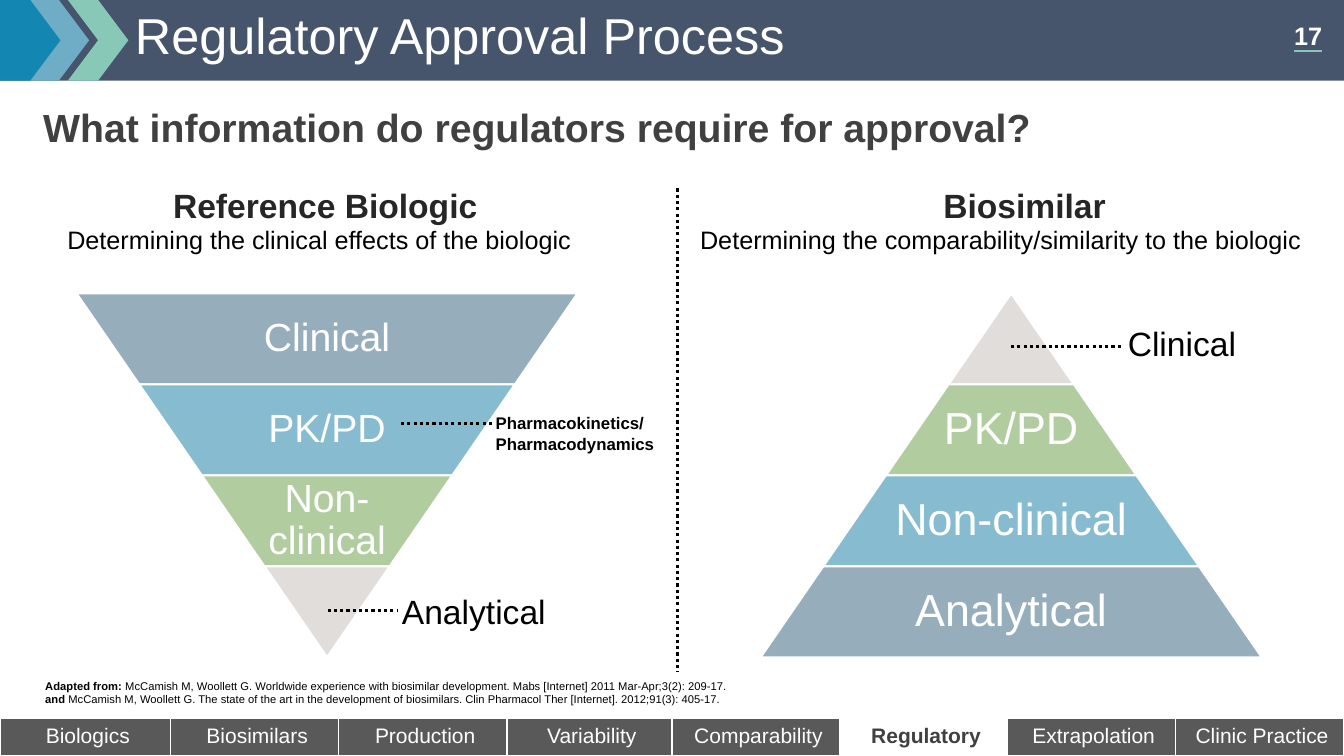
from lxml import etree
from pptx import Presentation
from pptx.dml.color import RGBColor
from pptx.enum import dml, shapes, text
from pptx.oxml import ns
from pptx.util import Pt

FONT = "Arial"
WHITE, BLACK, DARK, TAB_GREY = "FFFFFF", "000000", "404040", "595959"
SLATE, BLUE, GREEN, STONE = "7C9AAC", "69ABC3", "9EC189", "DAD5D1"
TIER_HEIGHT, TIER_STEP, PYRAMID_TOP = 65, 89.5, 209.5
TAB_TOP, TAB_HEIGHT = 512.8, 27.2
TABS = [("Biologics", 0), ("Biosimilars", 122), ("Production", 242),
        ("Variability", 362), ("Comparability", 480), ("Regulatory", 600),
        ("Extrapolation", 719.5), ("Clinic Practice", 839.5)]
SHAPE, ALIGN, ANCHOR = shapes.MSO_SHAPE, text.PP_ALIGN, text.MSO_ANCHOR


def rgb(value):
    return RGBColor.from_string(value)


def add_block(slide, kind, left, top, width, height, fill, outline=None, alpha=None):
    sp = slide.shapes.add_shape(kind, Pt(left), Pt(top), Pt(width), Pt(height))
    sp.shadow.inherit = False
    sp.fill.solid()
    sp.fill.fore_color.rgb = rgb(fill)
    if alpha:
        color = sp.fill._xPr.find(".//" + ns.qn("a:srgbClr"))
        etree.SubElement(color, ns.qn("a:alpha"), val=str(alpha * 1000))
    if outline:
        sp.line.color.rgb = rgb(WHITE)
        sp.line.width = Pt(outline)
    else:
        sp.line.fill.background()
    return sp


def add_line(slide, x1, y1, x2, y2, color=BLACK, width=2.25, dotted=True):
    line = slide.shapes.add_connector(
        shapes.MSO_CONNECTOR.STRAIGHT, Pt(x1), Pt(y1), Pt(x2), Pt(y2))
    line.line.color.rgb = rgb(color)
    line.line.width = Pt(width)
    if dotted:
        line.line.dash_style = dml.MSO_LINE.ROUND_DOT
    etree.SubElement(line._element.spPr, ns.qn("a:effectLst"))


def write(sp, lines, size, color=BLACK, bold=False, align=ALIGN.LEFT,
          anchor=ANCHOR.TOP, spacing=None, insets=None, wrap=True):
    tf = sp.text_frame
    tf.word_wrap = wrap
    tf.vertical_anchor = anchor
    if insets:
        tf.margin_left, tf.margin_top, tf.margin_right, tf.margin_bottom = map(Pt, insets)
    for i, content in enumerate(lines):
        p = tf.add_paragraph() if i else tf.paragraphs[0]
        p.alignment = align
        p.line_spacing = spacing
        p.font.name = FONT
        p.font.size = Pt(size)
        p.font.color.rgb = rgb(color)
        if isinstance(content, str):
            p.font.bold = bold
            p.add_run().text = content
            continue
        for words, run_bold in content:
            r = p.add_run()
            r.text = words
            r.font.bold = run_bold


def add_text(slide, left, top, width, height, lines, size, **style):
    sp = slide.shapes.add_textbox(Pt(left), Pt(top), Pt(width), Pt(height))
    write(sp, lines, size, **style)


def add_header(slide):
    add_block(slide, SHAPE.RECTANGLE, 0, 0, 960, 57.6, "46556C")
    for kind, left, color in [(SHAPE.CHEVRON, 48.5, "88C8B7"),
                              (SHAPE.CHEVRON, 20.5, "6FADC6"),
                              (SHAPE.PENTAGON, 0, "1386B2")]:
        add_block(slide, kind, left, 0, 43.2, 57.6, color)
    add_text(slide, 918, 8.6, 33, 34, ["17"], 18, color=WHITE, bold=True,
             align=ALIGN.CENTER, anchor=ANCHOR.MIDDLE, insets=(0, 0, 0, 0))
    add_line(slide, 924.5, 36.7, 944, 36.7, "87C7B6", 1.5, dotted=False)
    add_text(slide, 89.3, 8.6, 828, 38, ["Regulatory Approval Process"], 36,
             color=WHITE, anchor=ANCHOR.MIDDLE, spacing=0.9)
    add_text(slide, 23.8, 76.3, 911, 32.4,
             ["What information do regulators require for approval?"], 28,
             color=DARK, bold=True, anchor=ANCHOR.MIDDLE, spacing=0.9)


def add_tabs(slide, active):
    rights = [left for _, left in TABS[1:]] + [960]
    for (name, left), right in zip(TABS, rights):
        on = name == active
        sp = add_block(slide, SHAPE.RECTANGLE, left, TAB_TOP, right - left,
                       TAB_HEIGHT, WHITE if on else TAB_GREY, outline=1)
        write(sp, [name], 15, color=DARK if on else WHITE, bold=on,
              align=ALIGN.CENTER, anchor=ANCHOR.MIDDLE, spacing=0.9,
              insets=(5, 3, 1.5, 3))


def add_pyramid(slide, center, tiers, size, inverted=False):
    for i, (name, color) in enumerate(tiers):
        width = TIER_STEP * (len(tiers) - i if inverted else i + 1)
        top = PYRAMID_TOP + i * TIER_HEIGHT
        sp = add_block(slide, SHAPE.TRAPEZOID, center - width / 2, top, width,
                       TIER_HEIGHT, color, outline=1.5, alpha=80)
        sp.adjustments[0] = TIER_STEP / 2 / TIER_HEIGHT
        sp.rotation = 180 if inverted else 0
        if name:
            label = width * 0.65
            add_text(slide, center - label / 2, top, label, TIER_HEIGHT, [name],
                     size, color=WHITE, align=ALIGN.CENTER, anchor=ANCHOR.MIDDLE,
                     spacing=0.9, insets=(3, 3, 3, 3))


def add_heading(slide, left, width, name):
    add_text(slide, left, 128.2, width, 36, [name], 24, color="262626",
             bold=True, wrap=False)


def main():
    prs = Presentation()
    prs.slide_width, prs.slide_height = Pt(960), Pt(540)
    slide = prs.slides.add_slide(prs.slide_layouts[6])

    add_header(slide)
    add_tabs(slide, "Regulatory")
    add_line(slide, 483.8, 134.6, 483.8, 480)

    add_heading(slide, 116.5, 234, "Reference Biologic")
    add_text(slide, 41, 157, 385, 29,
             ["Determining the clinical effects of the biologic"], 18)
    add_pyramid(slide, 233.6, [("Clinical", SLATE), ("PK/PD", BLUE),
                               ("Non-clinical", GREEN), ("", STONE)], 28, inverted=True)
    add_line(slide, 234, 436.3, 284.4, 436.3)
    add_text(slide, 280, 418.5, 141, 36, ["Analytical"], 24)
    add_line(slide, 286.5, 302.4, 351.4, 302.4)
    add_text(slide, 347, 291.6, 141, 36,
             ["Pharmacokinetics/", "Pharmacodynamics"], 12, bold=True)

    add_heading(slide, 666.7, 132, "Biosimilar")
    add_text(slide, 493, 157, 448, 29,
             ["Determining the comparability/similarity to the biologic"], 18, wrap=False)
    add_pyramid(slide, 722.3, [("", STONE), ("PK/PD", GREEN),
                               ("Non-clinical", BLUE), ("Analytical", SLATE)], 32)
    add_line(slide, 722.2, 247.7, 801.4, 247.7)
    add_text(slide, 798.5, 227, 141, 36, ["Clinical"], 24)

    add_text(slide, 25.2, 481.7, 519, 26.6, [
        [("Adapted from: ", True),
         ("McCamish M, Woollett G. Worldwide experience with biosimilar development. "
          "Mabs [Internet] 2011 Mar-Apr;3(2): 209-17.", False)],
        [("and ", True),
         ("McCamish M, Woollett G. The state of the art in the development of biosimilars. "
          "Clin Pharmacol Ther [Internet]. 2012;91(3): 405-17.", False)]], 8)

    prs.save("out.pptx")


if __name__ == "__main__":
    main()
